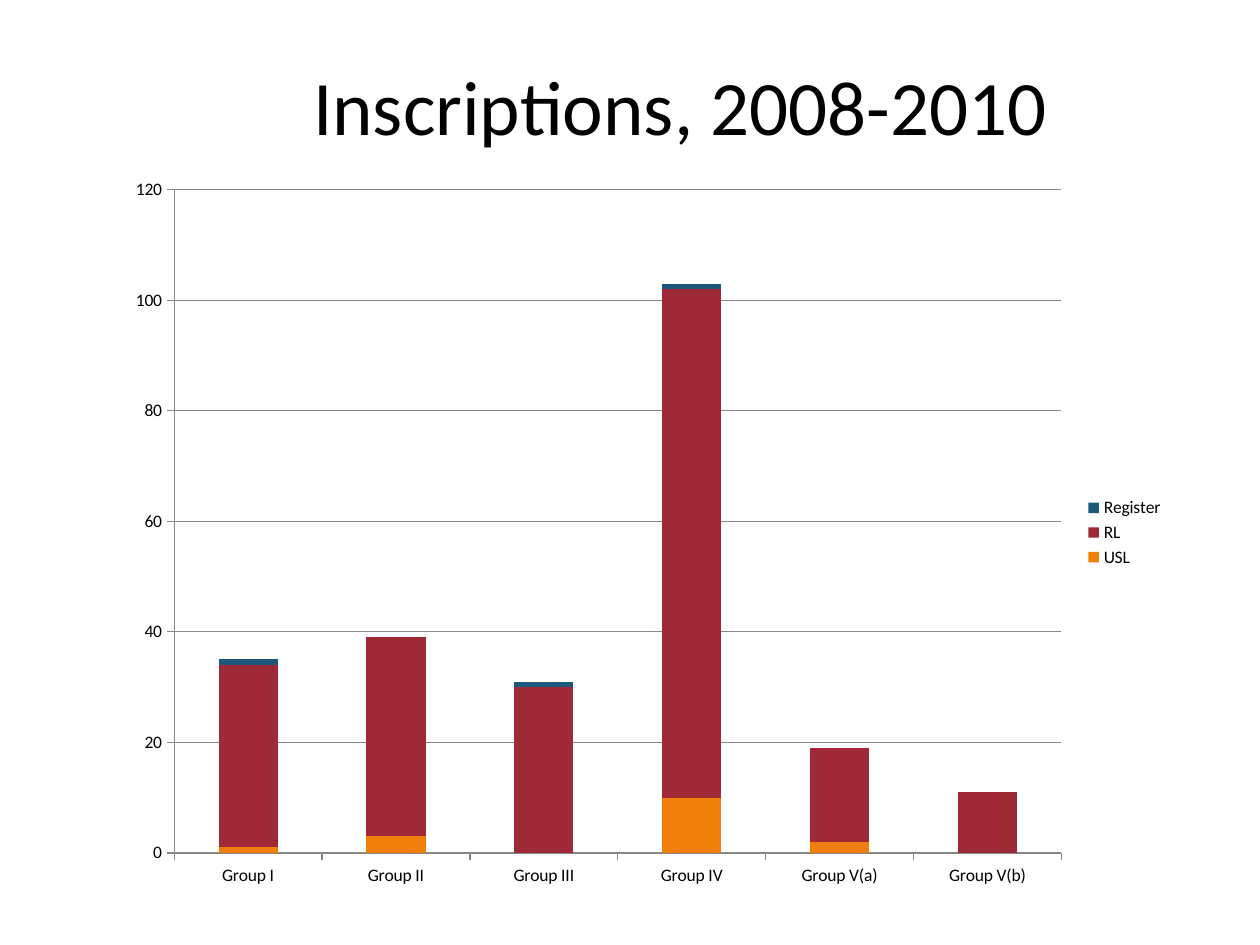
"""Build a slide with a stacked column chart of inscriptions by group."""
import pptx
import pptx.chart.data
import pptx.dml.color
import pptx.enum.chart
import pptx.enum.text
import pptx.util
from pptx.util import Cm

BLACK = pptx.dml.color.RGBColor(0x00, 0x00, 0x00)
GRAY = pptx.dml.color.RGBColor(0x86, 0x86, 0x86)
ORANGE = pptx.dml.color.RGBColor(0xF0, 0x7F, 0x09)
RED = pptx.dml.color.RGBColor(0x9F, 0x29, 0x36)
BLUE = pptx.dml.color.RGBColor(0x1B, 0x58, 0x7C)

GROUPS = ["Group I", "Group II", "Group III", "Group IV", "Group V(a)", "Group V(b)"]
LISTS = [
    ("USL", (1, 3, 0, 10, 2, 0), ORANGE),
    ("RL", (33, 36, 30, 92, 17, 11), RED),
    ("Register", (1, 0, 1, 1, 0, 0), BLUE),
]


def style_font(font, name, size, color):
    font.name = name
    font.size = pptx.util.Pt(size)
    font.color.rgb = color


def write_text(frame, text, *, font, size, color, align):
    paragraph = frame.paragraphs[0]
    paragraph.alignment = align
    span = paragraph.add_run()
    span.text = text
    style_font(span.font, font, size, color)


class SlideBuilder:
    def __init__(self, page, font="Calibri", color=BLACK):
        self.page = page
        self.font = font
        self.color = color

    def title(self, text, left, top, width, height, size=44):
        box = self.page.shapes.title
        box.left, box.top, box.width, box.height = left, top, width, height
        box.text_frame.vertical_anchor = pptx.enum.text.MSO_ANCHOR.MIDDLE
        write_text(box.text_frame, text, font=self.font, size=size, color=self.color,
                   align=pptx.enum.text.PP_ALIGN.CENTER)

    def stacked_chart(self, categories, series, left, top, width, height, size=10):
        data = pptx.chart.data.CategoryChartData()
        data.categories = categories
        for name, values, _ in series:
            data.add_series(name, values)
        kind = pptx.enum.chart.XL_CHART_TYPE.COLUMN_STACKED
        chart = self.page.shapes.add_chart(kind, left, top, width, height, data).chart
        style_font(chart.font, self.font, size, self.color)
        chart.has_title = False
        chart.has_legend = True
        chart.legend.position = pptx.enum.chart.XL_LEGEND_POSITION.RIGHT
        chart.legend.include_in_layout = False
        plot = chart.plots[0]
        plot.vary_by_categories = False
        plot.gap_width = 150
        plot.overlap = 100
        for column, (_, _, color) in zip(plot.series, series):
            column.format.fill.solid()
            column.format.fill.fore_color.rgb = color
        for axis in (chart.category_axis, chart.value_axis):
            axis.major_tick_mark = pptx.enum.chart.XL_TICK_MARK.OUTSIDE
            self.line(axis.format.line)
        scale = chart.value_axis
        scale.minimum_scale, scale.maximum_scale, scale.major_unit = 0, 120, 20
        scale.has_major_gridlines = True
        self.line(scale.major_gridlines.format.line)

    def line(self, line):
        line.color.rgb = GRAY
        line.width = pptx.util.Pt(0.75)


def main():
    deck = pptx.Presentation()
    deck.slide_width, deck.slide_height = Cm(25.4), Cm(19.05)
    builder = SlideBuilder(deck.slides.add_slide(deck.slide_layouts[5]))
    builder.title("Inscriptions, 2008-2010", Cm(3.3), Cm(0.43), Cm(20.83), Cm(3.38))
    builder.stacked_chart(GROUPS, LISTS, Cm(2.31), Cm(3.33), Cm(21.41), Cm(14.81))
    deck.save("out.pptx")


if __name__ == "__main__":
    main()
